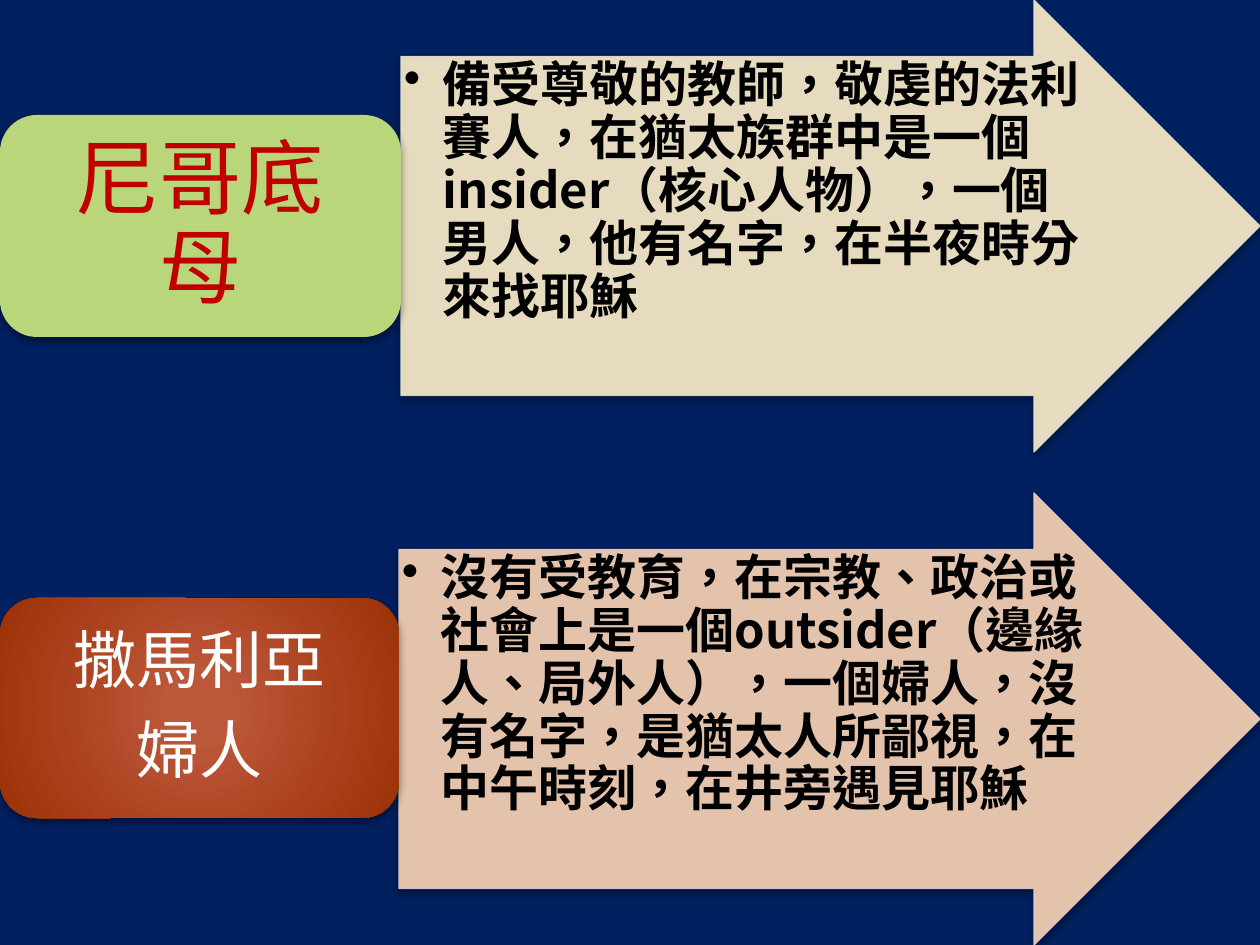
import lxml.etree
import pptx
import pptx.dml.color
import pptx.enum.shapes
import pptx.enum.text
import pptx.oxml
import pptx.oxml.ns
import pptx.util

RGBColor = pptx.dml.color.RGBColor
NAVY = RGBColor(0x00, 0x20, 0x60)
CREAM = RGBColor(0xFF, 0xF1, 0xCE)
CREAM_EDGE = RGBColor(0xD9, 0xE2, 0xCE)
PEACH = RGBColor(0xFD, 0xD7, 0xBA)
PEACH_EDGE = RGBColor(0xDD, 0xCF, 0xCC)
GREEN = RGBColor(0xB9, 0xD7, 0x7A)
RED = RGBColor(0xC0, 0x00, 0x00)
WHITE = RGBColor(0xFF, 0xFF, 0xFF)
BLACK = RGBColor(0x00, 0x00, 0x00)
RUST_STOPS = [
    (0, RGBColor(0xBD, 0x58, 0x3A)),
    (15, RGBColor(0xBC, 0x57, 0x3A)),
    (62, RGBColor(0xAB, 0x41, 0x1C)),
    (97, RGBColor(0x9C, 0x33, 0x08)),
    (100, RGBColor(0x7E, 0x36, 0x00)),
]
PX_PER_INCH = 126
BODY_FONT = "Noto Sans CJK SC"
NAME_FONT = "Arial"


def px(length):
    return pptx.util.Emu(round(length * 914400 / PX_PER_INCH))


def add_xml(parent, xml):
    """Append a DrawingML fragment whose root carries the a: namespace."""
    head, rest = xml.split(" ", 1)
    element = pptx.oxml.parse_xml(f"{head} {pptx.oxml.ns.nsdecls('a')} {rest}")
    parent.append(element)
    return element


class ComparisonSlide:
    def __init__(self, presentation):
        self.slide = presentation.slides.add_slide(presentation.slide_layouts[6])
        background = self.slide.background.fill
        background.solid()
        background.fore_color.rgb = NAVY

    def shape(self, kind, box, fill):
        shape = self.slide.shapes.add_shape(kind, *map(px, box))
        if isinstance(fill, list):
            self.radial_fill(shape, fill)
        else:
            shape.fill.solid()
            shape.fill.fore_color.rgb = fill
        shape.line.fill.background()
        return shape

    def radial_fill(self, shape, stops):
        shape.fill.background()
        properties = shape._element.spPr
        stop_xml = "".join(
            f'<a:gs pos="{position * 1000}"><a:srgbClr val="{color}"/></a:gs>'
            for position, color in stops)
        gradient = add_xml(properties, (
            f'<a:gradFill rotWithShape="1"><a:gsLst>{stop_xml}</a:gsLst>'
            '<a:path path="circle"><a:fillToRect l="50000" t="50000" r="50000" b="50000"/>'
            '</a:path></a:gradFill>'))
        properties.replace(properties.find(pptx.oxml.ns.qn("a:noFill")), gradient)

    def shadow(self, shape):
        add_xml(shape._element.spPr, (
            '<a:effectLst ><a:outerShdw blurRad="63500" dist="25400" dir="5400000" '
            'rotWithShape="0"><a:srgbClr val="000000"><a:alpha val="43000"/>'
            '</a:srgbClr></a:outerShdw></a:effectLst>'))

    def arrow(self, box, fill, edge):
        arrow = self.shape(pptx.enum.shapes.MSO_SHAPE.RIGHT_ARROW, box, fill)
        arrow.adjustments[0] = 0.75
        arrow.adjustments[1] = 0.5
        arrow.line.color.rgb = edge
        arrow.line.width = pptx.util.Pt(0.75)
        for color in arrow._element.spPr.iter(pptx.oxml.ns.qn("a:srgbClr")):
            lxml.etree.SubElement(color, pptx.oxml.ns.qn("a:alpha"), val="90000")
        self.shadow(arrow)

    def label(self, box, fill):
        self.shadow(self.shape(pptx.enum.shapes.MSO_SHAPE.ROUNDED_RECTANGLE, box, fill))

    def text(self, box, lines, size, color, font, margins, bullet=False):
        frame = self.slide.shapes.add_textbox(*map(px, box)).text_frame
        frame.word_wrap = True
        frame.margin_left = frame.margin_right = px(margins[0])
        frame.margin_top = frame.margin_bottom = px(margins[1])
        if not bullet:
            frame.vertical_anchor = pptx.enum.text.MSO_ANCHOR.MIDDLE
        for index, line in enumerate(lines):
            paragraph = frame.add_paragraph() if index else frame.paragraphs[0]
            paragraph.line_spacing = 0.9
            properties = paragraph._p.get_or_add_pPr()
            space = 15 if bullet else 35
            add_xml(properties,
                    f'<a:spcAft ><a:spcPct val="{space * 1000}"/></a:spcAft>')
            if bullet:
                indent = px(39)
                properties.set("marL", str(indent))
                properties.set("indent", str(-indent))
                add_xml(properties, '<a:buChar char="•"/>')
            else:
                paragraph.alignment = pptx.enum.text.PP_ALIGN.CENTER
            run = paragraph.add_run()
            run.text = line
            run.font.size = pptx.util.Pt(size)
            run.font.name = font
            run.font.bold = bullet
            run.font.color.rgb = color
            run_properties = run._r.get_or_add_rPr()
            run_properties.set("lang", "zh-TW")
            add_xml(run_properties, f'<a:ea typeface="{BODY_FONT}"/>')


def main():
    presentation = pptx.Presentation()
    presentation.slide_width = px(1260)
    presentation.slide_height = px(945)
    page = ComparisonSlide(presentation)

    # One row per person: label on the left, description in the arrow
    rows = [
        dict(top=0, split=401, label_top=115, label_height=222,
             arrow=(CREAM, CREAM_EDGE), label_fill=GREEN,
             name=["尼哥底母"], size=47, color=RED, margins=(25, 13),
             body="備受尊敬的教師，敬虔的法利賽人，在猶太族群中是一個insider"
                  "（核心人物），一個男人，他有名字，在半夜時分來找耶穌"),
        dict(top=493, split=399, label_top=598, label_height=220,
             arrow=(PEACH, PEACH_EDGE), label_fill=RUST_STOPS,
             name=["撒馬利亞", "婦人"], size=36, color=WHITE, margins=(19, 9),
             body="沒有受教育，在宗教、政治或社會上是一個outsider"
                  "（邊緣人、局外人），一個婦人，沒有名字，是猶太人所鄙視，"
                  "在中午時刻，在井旁遇見耶穌"),
    ]
    inset = 11
    for row in rows:
        split, top = row["split"], row["top"]
        page.arrow((split, top, 1260 - split, 452), *row["arrow"])
        page.text((split, top + 57, 690, 339), [row["body"]], 28, BLACK,
                  BODY_FONT, (3, 3), bullet=True)
        label_top, height = row["label_top"], row["label_height"]
        page.label((0, label_top, split, height), row["label_fill"])
        page.text((inset, label_top + inset, split - 2 * inset, height - 2 * inset),
                  row["name"], row["size"], row["color"], NAME_FONT, row["margins"])

    presentation.save("out.pptx")


if __name__ == "__main__":
    main()
